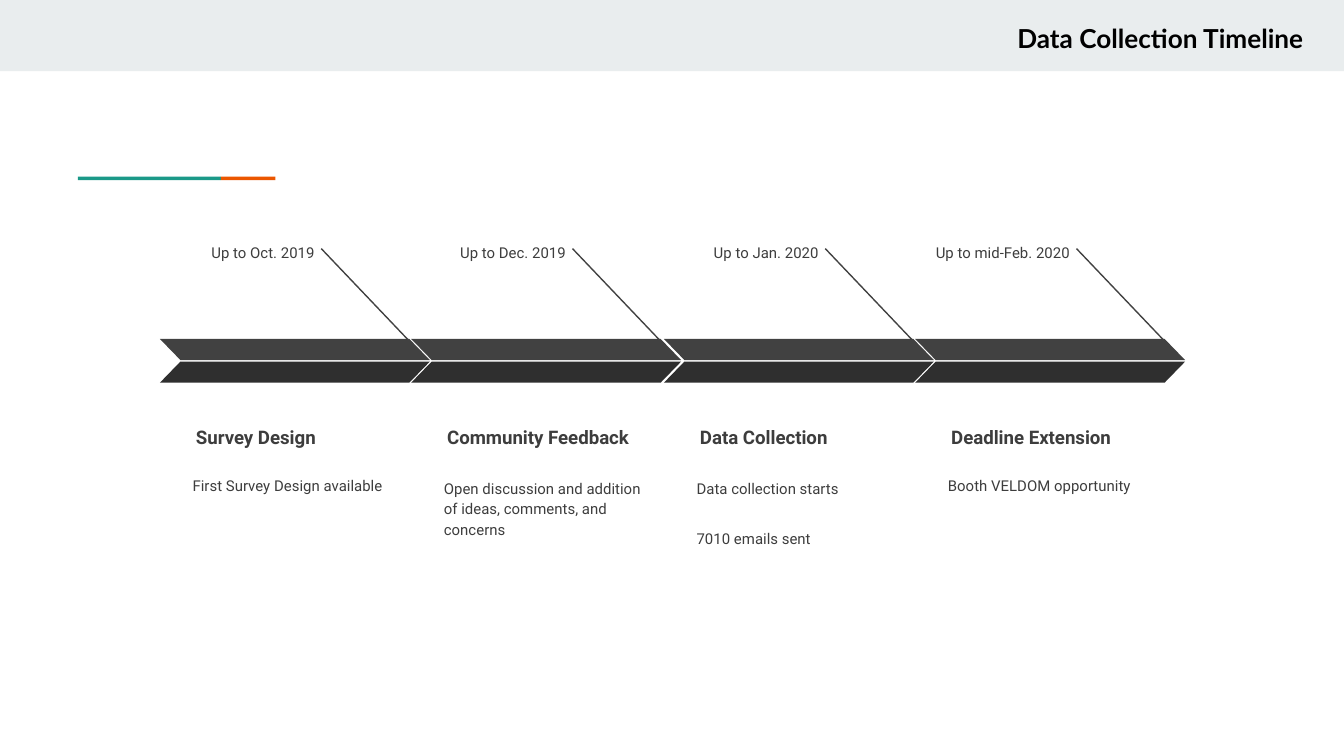
from dataclasses import dataclass

from lxml.etree import SubElement
from pptx import Presentation
from pptx.dml.color import RGBColor
from pptx.enum.shapes import MSO_CONNECTOR as Connector, MSO_SHAPE as Preset
from pptx.enum.text import MSO_ANCHOR as Anchor, PP_ALIGN as Align
from pptx.oxml.ns import qn
from pptx.shapes.autoshape import Shape
from pptx.slide import Slide
from pptx.util import Pt


@dataclass(frozen=True)
class Theme:
    band: str = "E9EDEE"
    green: str = "1A9988"
    orange: str = "EB5600"
    arrow_top: str = "414141"
    arrow_bottom: str = "2F2F2F"
    title_color: str = "000000"
    text_color: str = "3D3D3D"
    title_font: str = "Lato"
    text_font: str = "Roboto"
    title_size: float = 14
    heading_size: float = 10
    body_size: float = 8


@dataclass(frozen=True)
class Area:
    left: float
    top: float
    width: float
    height: float

    def lengths(self) -> tuple[Pt, Pt, Pt, Pt]:
        return Pt(self.left), Pt(self.top), Pt(self.width), Pt(self.height)


@dataclass(frozen=True)
class TextStyle:
    font: str
    size: float
    color: str
    bold: bool = False
    align: Align = Align.LEFT
    anchor: Anchor = Anchor.TOP
    line_spacing: float = 1.15
    paragraph_gap: float = 0


@dataclass(frozen=True)
class Stage:
    left: float
    date: str
    heading: str
    details: tuple[str, ...]


THEME = Theme()
TITLE = TextStyle(THEME.title_font, THEME.title_size, THEME.title_color,
                  bold=True, align=Align.RIGHT, line_spacing=1)
DATE = TextStyle(THEME.text_font, THEME.body_size, THEME.text_color,
                 align=Align.RIGHT, paragraph_gap=16)
HEADING = TextStyle(THEME.text_font, THEME.heading_size, THEME.text_color,
                    bold=True, anchor=Anchor.BOTTOM)
BODY = TextStyle(THEME.text_font, THEME.body_size, THEME.text_color, paragraph_gap=16)

STAGES = (
    Stage(85.7, "Up to Oct. 2019", "Survey Design", ("First Survey Design available",)),
    Stage(220.3, "Up to Dec. 2019", "Community Feedback",
          ("Open discussion and addition of ideas, comments, and concerns",)),
    Stage(355.7, "Up to Jan. 2020", "Data Collection",
          ("Data collection starts", "7010 emails sent")),
    Stage(490.3, "Up to mid-Feb. 2020", "Deadline Extension", ("Booth VELDOM opportunity",)),
)


def add_filled(page: Slide, preset: Preset, area: Area, color: str) -> Shape:
    shape = page.shapes.add_shape(preset, *area.lengths())
    shape.shadow.inherit = False
    shape.fill.solid()
    shape.fill.fore_color.rgb = RGBColor.from_string(color)
    shape.line.fill.background()
    return shape


def add_text(page: Slide, area: Area, lines: tuple[str, ...], style: TextStyle) -> None:
    frame = page.shapes.add_textbox(*area.lengths()).text_frame
    frame.word_wrap = True
    frame.vertical_anchor = style.anchor
    frame.margin_left = frame.margin_right = Pt(7.2)
    frame.margin_top = frame.margin_bottom = Pt(7.2)
    last = len(lines) - 1
    for index, line in enumerate(lines):
        para = frame.add_paragraph() if index else frame.paragraphs[0]
        para.alignment = style.align
        para.line_spacing = style.line_spacing
        para.space_before = Pt(style.paragraph_gap if index else 0)
        para.space_after = Pt(style.paragraph_gap if index == last else 0)
        span = para.add_run()
        span.text = line
        span.font.name = style.font
        span.font.size = Pt(style.size)
        span.font.bold = style.bold
        span.font.color.rgb = RGBColor.from_string(style.color)


def add_pointer(page: Slide, left: float) -> None:
    pointer = page.shapes.add_connector(
        Connector.STRAIGHT, Pt(left + 86.4), Pt(133.2), Pt(left + 142.6), Pt(192.2))
    pointer.line.width = Pt(0.75)
    pointer.line.color.rgb = RGBColor.from_string(THEME.arrow_top)
    SubElement(pointer.element.spPr, qn("a:effectLst"))


def add_arrow_half(page: Slide, left: float, top: float, color: str, flipped: bool) -> None:
    half = add_filled(page, Preset.PARALLELOGRAM, Area(left, top, 144.6, 11.3), color)
    half.adjustments[0] = 0.97
    if flipped:
        half.element.spPr.find(qn("a:xfrm")).set("flipH", "1")


def add_stage(page: Slide, stage: Stage) -> None:
    left = stage.left
    add_text(page, Area(left, 123.8, 90, 18.7), (stage.date,), DATE)
    add_text(page, Area(left + 12.2, 212, 118.8, 35.3), (stage.heading,), HEADING)
    add_text(page, Area(left + 10.4, 248.2, 121.7, 58.3), stage.details, BODY)
    add_pointer(page, left)
    add_arrow_half(page, left, 181.6, THEME.arrow_top, True)
    add_arrow_half(page, left, 193.7, THEME.arrow_bottom, False)


def main() -> None:
    """Build the data collection timeline slide."""
    deck = Presentation()
    deck.slide_width, deck.slide_height = Pt(720), Pt(405)
    page = deck.slides.add_slide(deck.slide_layouts[6])
    add_filled(page, Preset.RECTANGLE, Area(0, 0, 720, 38.2), THEME.band)
    add_filled(page, Preset.RECTANGLE, Area(41.8, 94.7, 76.6, 1.8), THEME.green)
    add_filled(page, Preset.RECTANGLE, Area(118.4, 94.7, 29.2, 1.8), THEME.orange)
    add_text(page, Area(535, 5, 170.4, 28.1), ("Data Collection Timeline",), TITLE)
    for stage in STAGES:
        add_stage(page, stage)
    deck.save("out.pptx")


if __name__ == "__main__":
    main()
